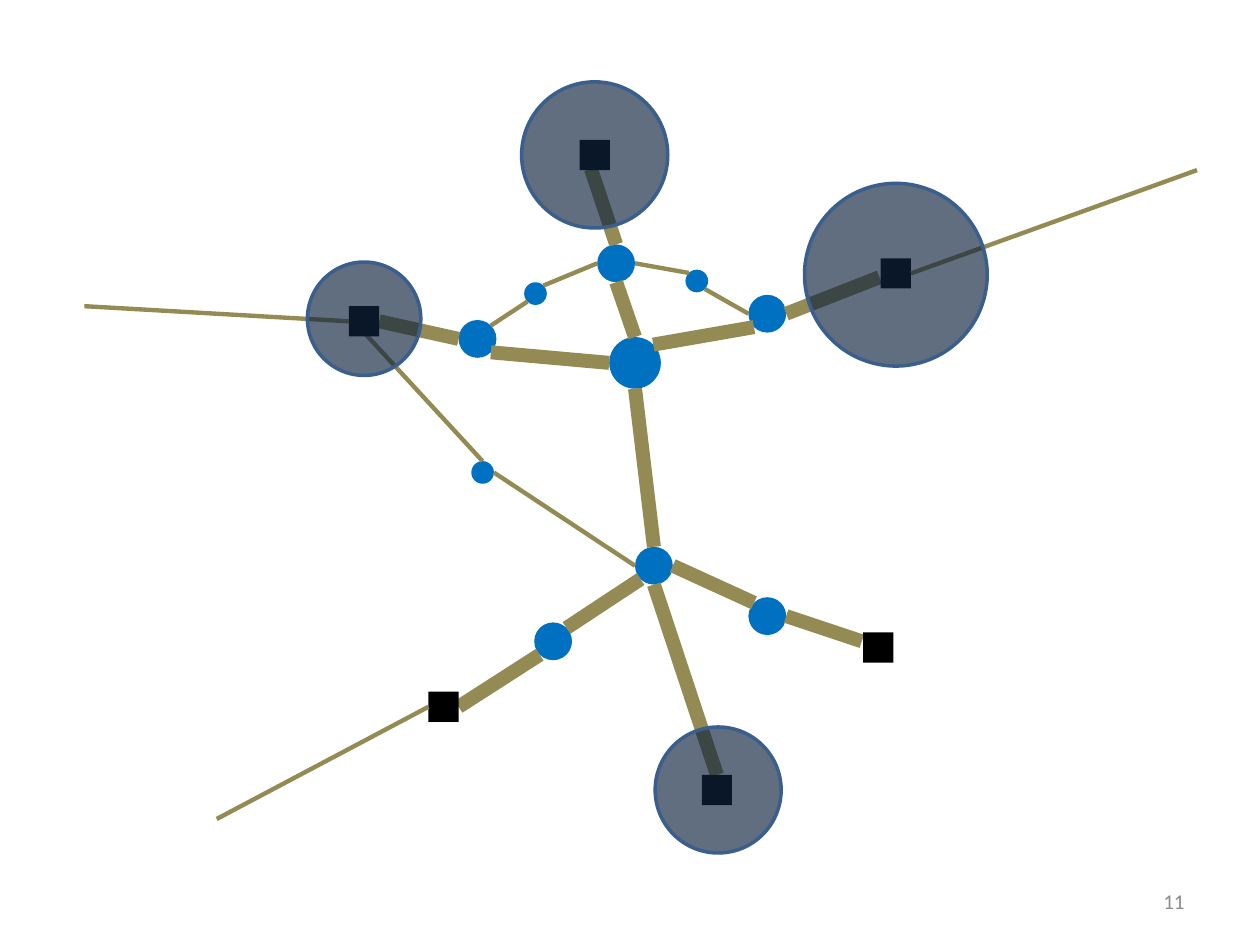
"""Builds a slide with a hub-and-branch network and its coverage zones."""
from dataclasses import dataclass
from math import cos, radians, sin

from lxml import etree
from pptx import Presentation
from pptx.dml.color import RGBColor
from pptx.enum.shapes import MSO_CONNECTOR, MSO_SHAPE
from pptx.enum.text import MSO_ANCHOR, PP_ALIGN
from pptx.oxml.ns import qn
from pptx.util import Inches, Pt

OVAL, SQUARE = MSO_SHAPE.OVAL, MSO_SHAPE.RECTANGLE
STRAIGHT = MSO_CONNECTOR.STRAIGHT
RIGHT, MIDDLE = PP_ALIGN.RIGHT, MSO_ANCHOR.MIDDLE

COLORS = {"node": "0070C0", "link": "948A54", "terminal": "000000",
          "zone": "0F243E", "zone_edge": "3A5F8C", "number": "8C8C8C"}
COLUMNS = 10
TRUNK, BRANCH = 8, 2.5
HUB, MAIN, MINOR, TERMINAL = 0.41, 0.3, 0.18, 0.24
ANGLES = {"E": 0, "SE": 45, "S": 90, "SW": 135, "W": 180, "NW": 225, "N": 270, "NE": 315}

NODES = {
    "hub": (5.04, 2.88, HUB),
    "west": (3.79, 2.69, MAIN), "north": (4.89, 2.09, MAIN), "east": (6.09, 2.49, MAIN),
    "south": (5.19, 4.49, MAIN), "southwest": (4.39, 5.09, MAIN),
    "southeast": (6.09, 4.89, MAIN),
    "relay_nw": (4.25, 2.33, MINOR), "relay_ne": (5.53, 2.23, MINOR),
    "relay_sw": (3.83, 3.75, MINOR),
}
TERMINALS = {
    "west_end": (2.89, 2.55, TERMINAL), "north_end": (4.72, 1.23, TERMINAL),
    "east_end": (7.11, 2.17, TERMINAL), "southeast_end": (6.97, 5.14, TERMINAL),
    "south_end": (5.69, 6.27, TERMINAL), "southwest_end": (3.52, 5.61, TERMINAL),
}
LINKS = [
    ((4.69, 1.34), ("north", "N"), TRUNK),
    (("north", "W"), ("relay_nw", "NE"), BRANCH),
    (("west", "NE"), ("relay_nw", "SW"), BRANCH),
    (("west_end", "E"), ("west", "W"), TRUNK),
    (("north", "E"), ("relay_ne", "NW"), BRANCH),
    ((6.98, 2.2), ("east", "E"), TRUNK),
    (("east", "W"), ("relay_ne", "SE"), BRANCH),
    (("hub", "N"), ("north", "S"), TRUNK),
    (("west", "SE"), ("hub", "W"), TRUNK),
    (("east", "SW"), ("hub", "NE"), TRUNK),
    ((2.89, 2.64), ("relay_sw", "N"), BRANCH),
    (("relay_sw", "E"), ("south", "W"), BRANCH),
    (("hub", "S"), ("south", "N"), TRUNK),
    (("south", "E"), ("southeast", "NW"), TRUNK),
    (("southeast", "E"), (6.84, 5.09), TRUNK),
    (("south", "S"), ("south_end", "N"), TRUNK),
    (("south", "SW"), ("southwest", "NE"), TRUNK),
    (("southwest", "SW"), ("southwest_end", "E"), TRUNK),
]
OUTER_LINKS = [
    ((0.67, 2.43), ("west_end", "W"), BRANCH),
    ((9.5, 1.35), ("east_end", "E"), BRANCH),
    ((1.72, 6.5), ("southwest_end", "W"), BRANCH),
]
ZONES = [(2.89, 2.53, 0.9), (7.11, 2.18, 1.45), (4.72, 1.23, 1.16), (5.7, 6.27, 1)]


@dataclass
class Box:
    """Region of the slide with a square grid of COLUMNS columns."""
    left: int
    top: int
    width: int

    def length(self, cells):
        """Turn grid cells into slide units."""
        return round(self.width * cells / COLUMNS)

    def point(self, x, y):
        """Turn a grid position into a slide position."""
        return self.left + self.length(x), self.top + self.length(y)


def paint(line_or_fill, color):
    """Give a fill one solid colour."""
    line_or_fill.solid()
    line_or_fill.fore_color.rgb = RGBColor.from_string(COLORS[color])


def add_disc(shapes, box, kind, place, color):
    """Place a shape of equal sides about its centre."""
    x, y, size = place
    left, top = box.point(x - size / 2, y - size / 2)
    disc = shapes.add_shape(kind, left, top, box.length(size), box.length(size))
    disc.shadow.inherit = False
    paint(disc.fill, color)
    disc.line.fill.background()
    return disc


def locate(end):
    """Find the grid position of a free point or of a side of a part."""
    if not isinstance(end[0], str):
        return end
    name, side = end
    x, y, size = {**NODES, **TERMINALS}[name]
    angle = radians(ANGLES[side])
    return x + size / 2 * cos(angle), y + size / 2 * sin(angle)


def add_links(shapes, box, links):
    """Draw the links between parts of the network."""
    for start, finish, weight in links:
        link = shapes.add_connector(STRAIGHT, *box.point(*locate(start)),
                                    *box.point(*locate(finish)))
        paint(link.line.fill, "link")
        link.line.width = Pt(weight)
        etree.SubElement(link._element.spPr, qn("a:effectLst"))


def add_network(slide, box):
    """Group the nodes, their links and the terminals."""
    shapes = slide.shapes.add_group_shape().shapes
    for place in NODES.values():
        add_disc(shapes, box, OVAL, place, "node")
    add_links(shapes, box, LINKS)
    for place in TERMINALS.values():
        add_disc(shapes, box, SQUARE, place, "terminal")


def add_zones(slide, box):
    """Lay the translucent coverage zones over the terminals."""
    for place in ZONES:
        zone = add_disc(slide.shapes, box, OVAL, place, "zone")
        tint = zone._element.spPr.find(qn("a:solidFill"))[0]
        etree.SubElement(tint, qn("a:alpha"), val="66000")
        paint(zone.line.fill, "zone_edge")
        zone.line.width = Pt(2)


def add_text(slide, box, text, *, at, size, color, align, font="Calibri"):
    """Write one line of text in a box on the grid."""
    x, y, width, height = at
    label = slide.shapes.add_textbox(*box.point(x, y), box.length(width), box.length(height))
    frame = label.text_frame
    frame.word_wrap = True
    frame.vertical_anchor = MIDDLE
    paragraph = frame.paragraphs[0]
    paragraph.alignment = align
    run = paragraph.add_run()
    run.text = text
    run.font.name = font
    run.font.size = Pt(size)
    paint(run.font.fill, color)


def main():
    """Build and save the slide."""
    deck = Presentation()
    deck.slide_width, deck.slide_height = Inches(10), Inches(7.5)
    slide = deck.slides.add_slide(deck.slide_layouts[6])
    page = Box(0, 0, deck.slide_width)
    add_network(slide, page)
    add_links(slide.shapes, page, OUTER_LINKS)
    add_zones(slide, page)
    add_text(slide, page, "11", at=(7.17, 6.95, 2.33, 0.4), size=12, color="number", align=RIGHT)
    deck.save("out.pptx")


if __name__ == "__main__":
    main()
